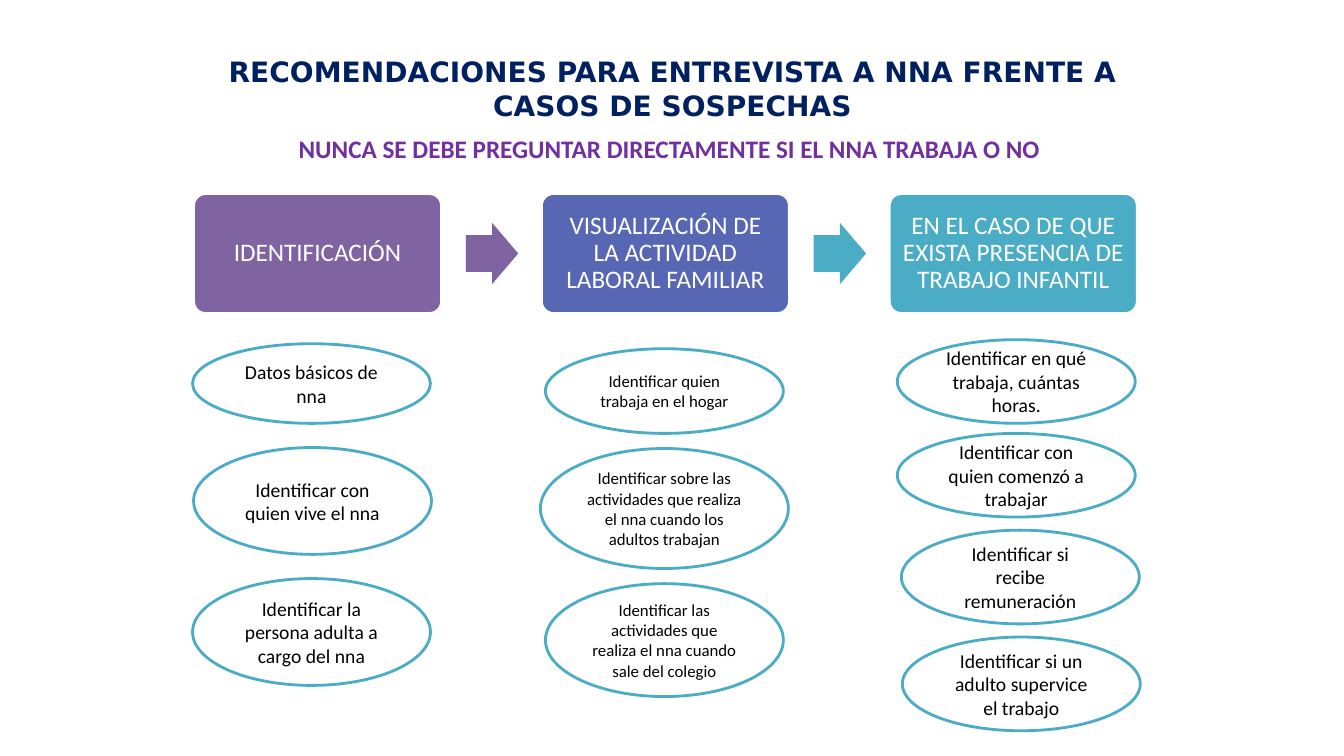
from pptx import Presentation
from pptx.dml.color import RGBColor
from pptx.enum.shapes import MSO_SHAPE
from pptx.enum.text import MSO_ANCHOR, MSO_AUTO_SIZE, PP_ALIGN
from pptx.util import Inches, Pt

ROUNDED = MSO_SHAPE.ROUNDED_RECTANGLE
ARROW = MSO_SHAPE.RIGHT_ARROW
OVAL = MSO_SHAPE.OVAL
TOP = MSO_ANCHOR.TOP
MIDDLE = MSO_ANCHOR.MIDDLE
CENTER = PP_ALIGN.CENTER
NO_AUTOFIT = MSO_AUTO_SIZE.NONE
TITLE_ONLY = 5

COLORS = {
    "navy": "002060",
    "violet": "7030A0",
    "purple": "8064A2",
    "blue": "5767B4",
    "teal": "4BACC6",
    "white": "FFFFFF",
    "black": "000000",
}

STEP_LEFT, STEP_PITCH = 1.92, 3.45
ARROW_LEFT = 4.62

STEPS = [
    ("IDENTIFICACIÓN", "purple", 14, [
        ("Datos básicos de nna", 1.91, 3.41, 2.36, 0.79),
        ("Identificar con quien vive el nna", 1.92, 4.44, 2.36, 1.06),
        ("Identificar la persona adulta a cargo del nna", 1.91, 5.74, 2.36, 1.06),
    ]),
    ("VISUALIZACIÓN DE LA ACTIVIDAD LABORAL FAMILIAR", "blue", 12, [
        ("Identificar quien trabaja en el hogar", 5.41, 3.46, 2.36, 0.84),
        ("Identificar sobre las actividades que realiza el nna cuando los adultos trabajan",
         5.36, 4.45, 2.46, 1.19),
        ("Identificar las actividades que realiza el nna cuando sale del colegio",
         5.41, 5.79, 2.36, 1.12),
    ]),
    ("EN EL CASO DE QUE EXISTA PRESENCIA DE TRABAJO INFANTIL", "teal", 14, [
        ("Identificar en qué trabaja, cuántas horas.", 8.9, 3.37, 2.36, 0.83),
        ("Identificar con quien comenzó a trabajar", 8.9, 4.3, 2.36, 0.83),
        ("Identificar si recibe remuneración", 8.94, 5.26, 2.36, 0.93),
        ("Identificar si un adulto supervice el trabajo", 8.95, 6.32, 2.36, 0.93),
    ]),
]


class SlideBuilder:
    font_name = "Calibri"
    title_font = "DejaVu Sans"

    def __init__(self, slide):
        self.slide = slide

    def color(self, name):
        return RGBColor.from_string(COLORS[name])

    def set_text(self, shape, text, size, color, bold=False, font=None, anchor=MIDDLE):
        frame = shape.text_frame
        frame.text = text
        frame.word_wrap = True
        frame.auto_size = NO_AUTOFIT
        frame.vertical_anchor = anchor
        paragraph = frame.paragraphs[0]
        paragraph.alignment = CENTER
        paragraph.space_before = Pt(0)
        paragraph.font.name = font or self.font_name
        paragraph.font.size = Pt(size)
        paragraph.font.bold = bold
        paragraph.font.color.rgb = self.color(color)
        return paragraph

    def title(self, text, left, top, width, height):
        shape = self.slide.shapes.title
        shape.left, shape.top = Inches(left), Inches(top)
        shape.width, shape.height = Inches(width), Inches(height)
        self.set_text(shape, text, 20, "navy", True, self.title_font, TOP)

    def text(self, text, left, top, width, height):
        box = self.slide.shapes.add_textbox(
            Inches(left), Inches(top), Inches(width), Inches(height))
        self.set_text(box, text, 18, "violet", True, anchor=TOP)

    def shape(self, kind, left, top, width, height, fill, line=None):
        shape = self.slide.shapes.add_shape(
            kind, Inches(left), Inches(top), Inches(width), Inches(height))
        shape.shadow.inherit = False
        shape.fill.solid()
        shape.fill.fore_color.rgb = self.color(fill)
        if line:
            shape.line.color.rgb = self.color(line)
            shape.line.width = Pt(2)
        else:
            shape.line.fill.background()
        return shape

    def step(self, text, left, color):
        box = self.shape(ROUNDED, left, 1.92, 2.46, 1.19, color, "white")
        box.adjustments[0] = 0.1
        paragraph = self.set_text(box, text, 18, "white")
        paragraph.line_spacing = 0.9

    def arrow(self, left, color):
        arrow = self.shape(ARROW, left, 2.21, 0.52, 0.61, color)
        arrow.adjustments[0] = 0.6
        arrow.adjustments[1] = 0.5

    def bubble(self, text, left, top, width, height, size):
        oval = self.shape(OVAL, left, top, width, height, "white", "teal")
        self.set_text(oval, text, size, "black")


def main():
    presentation = Presentation()
    presentation.slide_width = Inches(13.33)
    presentation.slide_height = Inches(7.5)
    slide = presentation.slides.add_slide(presentation.slide_layouts[TITLE_ONLY])
    builder = SlideBuilder(slide)

    builder.title("RECOMENDACIONES PARA ENTREVISTA A NNA FRENTE A CASOS DE SOSPECHAS",
                  1.67, 0.49, 10, 1.08)
    builder.text("NUNCA SE DEBE PREGUNTAR DIRECTAMENTE SI EL NNA TRABAJA O NO",
                 2.57, 1.27, 8.14, 0.4)

    for index, (heading, color, size, bubbles) in enumerate(STEPS):
        builder.step(heading, STEP_LEFT + index * STEP_PITCH, color)
        for text, left, top, width, height in bubbles:
            builder.bubble(text, left, top, width, height, size)

    for index, color in enumerate(("purple", "teal")):
        builder.arrow(ARROW_LEFT + index * STEP_PITCH, color)

    presentation.save("out.pptx")


if __name__ == "__main__":
    main()
